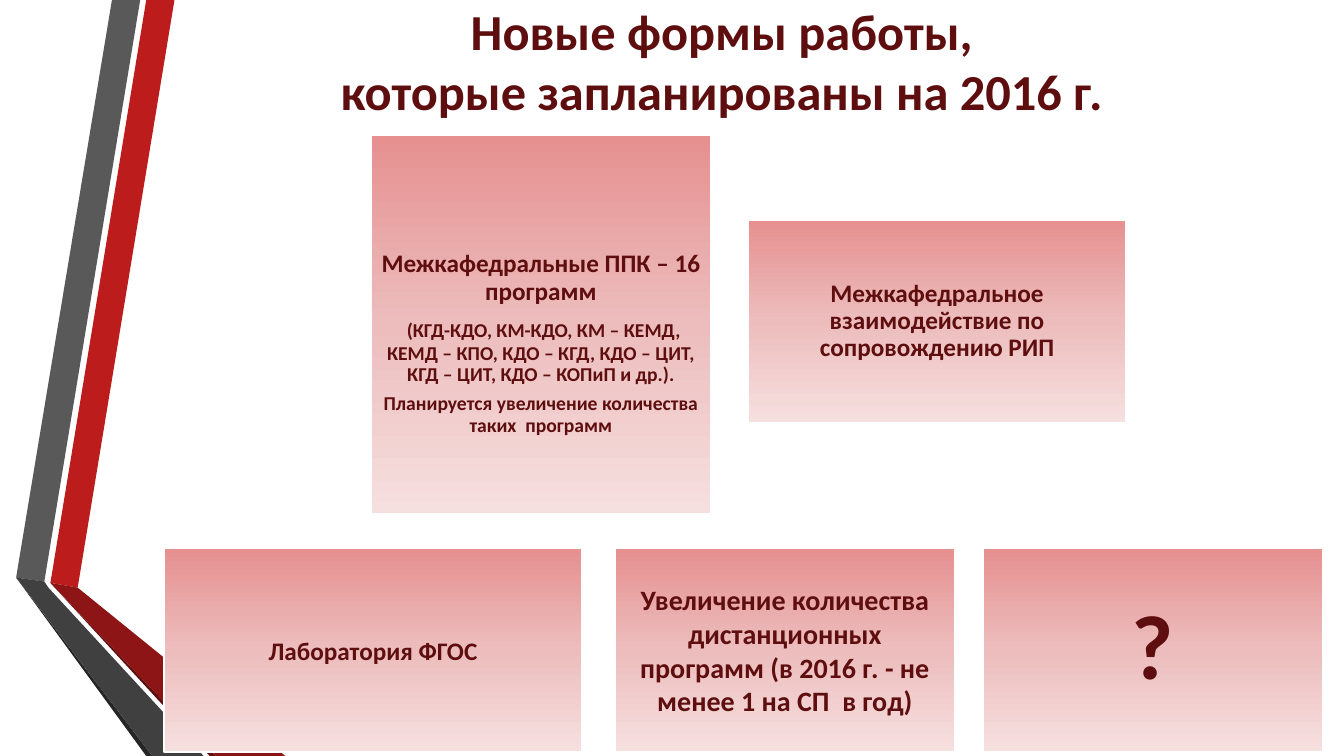
from copy import deepcopy
from dataclasses import dataclass

from pptx import Presentation
from pptx.dml.color import RGBColor
from pptx.enum.shapes import MSO_SHAPE
from pptx.enum.text import MSO_ANCHOR, PP_ALIGN
from pptx.oxml.ns import qn
from pptx.util import Inches, Pt

RECT = MSO_SHAPE.RECTANGLE
MIDDLE = MSO_ANCHOR.MIDDLE
CENTER = PP_ALIGN.CENTER


@dataclass(frozen=True)
class Theme:
    font: str = "Calibri"
    ink: str = "5E0E0E"
    edge: str = "FFFFFF"
    fade: tuple = ((0, "E69090"), (50, "EDBDBD"), (100, "F6DFDF"))
    red: str = "BC1C1C"
    wine: str = "8D1515"
    gray: str = "595959"
    coal: str = "404040"
    black: str = "262626"
    head: int = 36
    body: int = 18
    large: int = 20
    small: int = 14
    mark: int = 65
    rim: float = 1.25


class Page:
    """Draws on one slide; places are percent of its width and height."""

    def __init__(self, deck, theme):
        self.theme = theme
        self.wide, self.high = deck.slide_width, deck.slide_height
        self.shapes = deck.slides.add_slide(deck.slide_layouts[6]).shapes

    def spot(self, x, y):
        return round(self.wide * x / 100), round(self.high * y / 100)

    def band(self, color, *dots):
        """Draw a filled outline through the dots."""
        first, *rest = [self.spot(*dot) for dot in dots]
        pen = self.shapes.build_freeform(*first, scale=1.0)
        pen.add_line_segments(rest, close=True)
        shape = pen.convert_to_shape()
        shape.shadow.inherit = False
        shape.fill.solid()
        shape.fill.fore_color.rgb = RGBColor.from_string(color)
        shape.line.fill.background()

    def shade(self, shape):
        """Fill a shape with the theme's fade, from top to bottom."""
        shape.fill.gradient()
        shape.fill.gradient_angle = 270
        stops = shape.element.spPr.find(qn("a:gradFill")).find(qn("a:gsLst"))
        stops.insert(1, deepcopy(stops[0]))
        for stop, (place, color) in zip(shape.fill.gradient_stops, self.theme.fade):
            stop.position = place / 100
            stop.color.rgb = RGBColor.from_string(color)

    def label(self, shape, paras, pad=0.07, top=None, lead=1.0):
        """Fill a shape with paragraphs, each (space after, runs of (text, size))."""
        frame = shape.text_frame
        frame.word_wrap = True
        frame.vertical_anchor = MIDDLE
        frame.margin_left = frame.margin_right = frame.margin_bottom = Inches(pad)
        frame.margin_top = Inches(pad if top is None else top)
        for i, (after, runs) in enumerate(paras):
            para = frame.add_paragraph() if i else frame.paragraphs[0]
            para.alignment = CENTER
            para.line_spacing = lead
            para.space_after = Pt(after)
            for text, size in runs:
                if text == "\n":
                    para.add_line_break()
                    continue
                run = para.add_run()
                run.text = text
                run.font.name = self.theme.font
                run.font.size = Pt(size)
                run.font.bold = True
                run.font.color.rgb = RGBColor.from_string(self.theme.ink)

    def title(self, x, y, w, h, runs):
        box = self.shapes.add_textbox(*self.spot(x, y), *self.spot(w, h))
        self.label(box, [(0, runs)])

    def card(self, x, y, w, h, paras, **style):
        shape = self.shapes.add_shape(RECT, *self.spot(x, y), *self.spot(w, h))
        shape.shadow.inherit = False
        self.shade(shape)
        shape.line.color.rgb = RGBColor.from_string(self.theme.edge)
        shape.line.width = Pt(self.theme.rim)
        self.label(shape, paras, **style)


def main():
    deck = Presentation()
    deck.slide_width, deck.slide_height = Inches(13.33), Inches(7.5)
    theme = Theme()
    page = Page(deck, theme)

    red, gray = (3.75, 77.1), (1.2, 76.4)
    page.band(theme.red, red, (5.78, 77.73), (12.98, 0), (10.88, 0))
    page.band(theme.gray, (10.43, 0), (8.33, 0), gray, (3.3, 76.93))
    page.band(theme.black, gray, (10.88, 100), (11.33, 100))
    page.band(theme.ink, red, (15.6, 100), (16.05, 100))
    page.band(theme.wine, red, (16.05, 100), (21.23, 100), (5.78, 77.73))
    page.band(theme.coal, (15.15, 100), (3.6, 77.73), (3.3, 76.93), gray, (11.33, 100))

    page.title(9.38, 3.47, 88.67, 9.07, [
        ("Новые формы работы,", theme.head),
        ("\n", theme.head),
        ("которые запланированы на 2016 г.", theme.head),
    ])

    slim, low, base = 25.28, 26.93, 72.53
    page.card(27.61, 17.87, slim, 50.13, [
        (7.5, [("Межкафедральные ППК – 16 программ", theme.body)]),
        (6, [(" ", theme.body),
             ("(КГД-КДО, КМ-КДО, КМ – КЕМД, КЕМД – КПО, КДО – КГД, "
              "КДО – ЦИТ, КГД – ЦИТ, КДО – КОПиП и др.).", theme.small)]),
        (0, [("Планируется увеличение количества таких  программ", theme.small)]),
    ], top=0.45, lead=0.9)
    page.card(55.66, 29.07, 28.13, low, [
        (0, [("Межкафедральное взаимодействие по сопровождению РИП", theme.body)]),
    ], lead=0.9)
    page.card(12.23, base, 31.06, low, [(0, [("Лаборатория ФГОС", theme.body)])])
    page.card(45.76, base, slim, low, [
        (0, [("Увеличение количества дистанционных программ "
              "(в 2016 г. - не менее 1 на СП  в год)", theme.large)]),
    ], pad=0.08)
    page.card(73.14, base, slim, low, [(0, [("?", theme.mark)])], pad=0.27, lead=0.9)

    deck.save("out.pptx")


if __name__ == "__main__":
    main()
